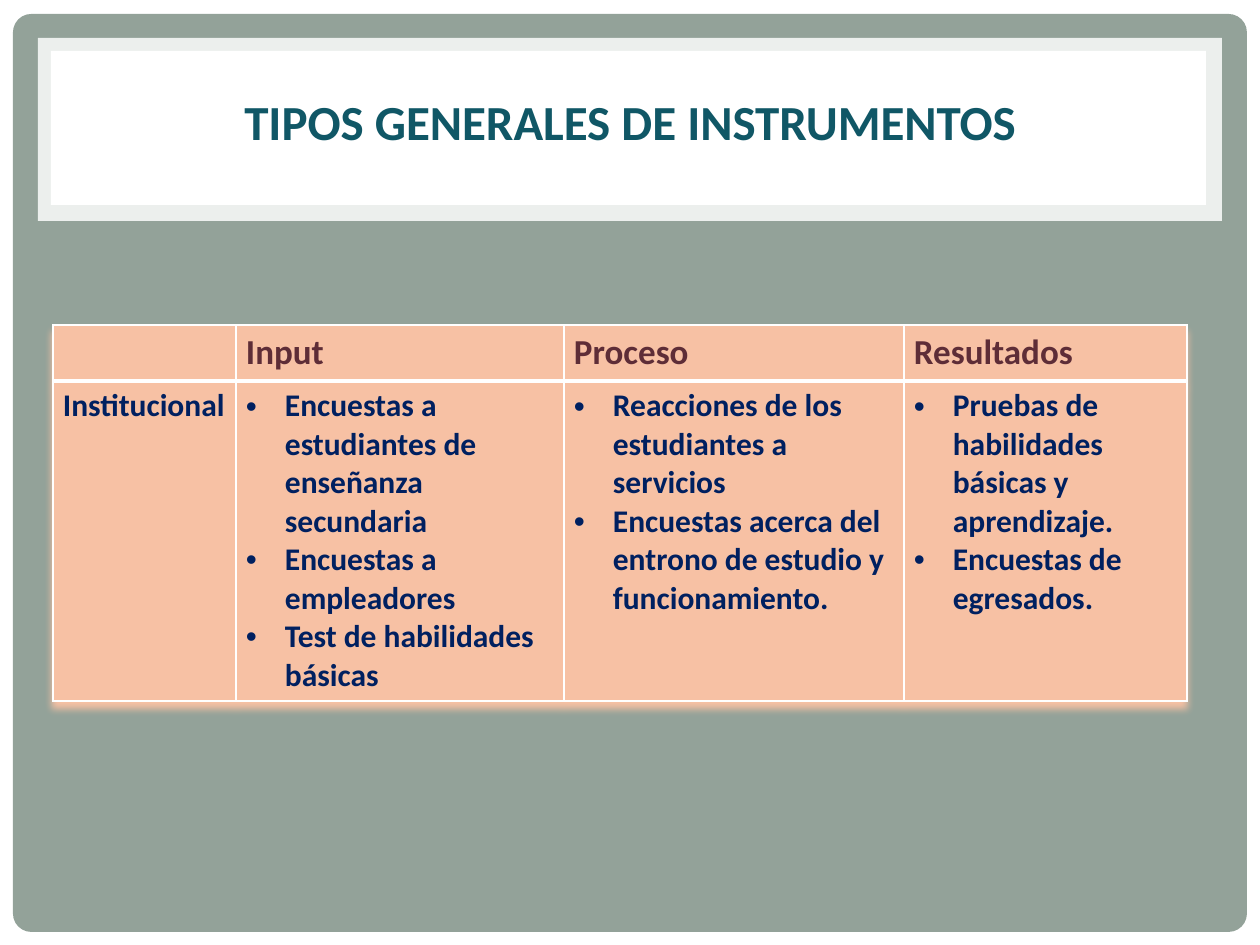
from lxml.etree import SubElement as Sub
from pptx import Presentation
from pptx.dml.color import RGBColor
from pptx.enum.shapes import MSO_SHAPE as Kind
from pptx.enum.text import MSO_ANCHOR as Anchor, PP_ALIGN as Align
from pptx.oxml import parse_xml
from pptx.oxml.ns import nsdecls, qn
from pptx.util import Pt

SCALE = 914400 / 126
WHITE, SAGE, PEACH = "FFFFFF", "93A299", "F7C1A4"
HEAD = {"size": Pt(20), "color": "5E2D37"}
BODY = {"size": Pt(18), "color": "002060"}
TITLE = {"size": Pt(28), "color": "105766"}
COLS = (183, 328, 340, 283)
ROWS = (56, 320)
CELLS = (
    ([], ["Input"], ["Proceso"], ["Resultados"]),
    (
        ["Institucional"],
        ["Encuestas a estudiantes de enseñanza secundaria",
         "Encuestas a empleadores",
         "Test de habilidades básicas"],
        ["Reacciones de los estudiantes a servicios",
         "Encuestas acerca del entrono de estudio y funcionamiento."],
        ["Pruebas de habilidades básicas y aprendizaje.",
         "Encuestas de egresados."],
    ),
)


def px(n):
    return round(n * SCALE)


def rgb(code):
    return RGBColor.from_string(code)


def paint(fill, code):
    fill.solid()
    fill.fore_color.rgb = rgb(code)


def style(font, look):
    font.color.rgb = rgb(look["color"])
    for key, val in {"name": "Calibri", "bold": True, "size": look["size"]}.items():
        setattr(font, key, val)


def panel(slide, box, code, kind=Kind.RECTANGLE):
    shape = slide.shapes.add_shape(kind, *map(px, box))
    shape.shadow.inherit = False
    shape.line.fill.background()
    paint(shape.fill, code)
    return shape


def add_frame(slide, box):
    frame = panel(slide, box, SAGE, Kind.ROUNDED_RECTANGLE)
    frame.adjustments[0] = 0.02


def add_title(slide, box, text):
    x, y, w, h = box
    glow = panel(slide, box, WHITE)
    tint = glow.fill._xPr.find(qn("a:solidFill"))[0]
    Sub(tint, qn("a:alpha"), val="83000")
    panel(slide, (x + 13, y + 13, w - 29, h - 29), WHITE)
    title = slide.shapes.title
    spots = (x + 49, y + 12, w - 98, h - 42)
    for key, val in zip(("left", "top", "width", "height"), spots):
        setattr(title, key, px(val))
    title.element.getparent().append(title.element)
    frame = title.text_frame
    frame.word_wrap = True
    frame.vertical_anchor = Anchor.MIDDLE
    frame.text = text
    para = frame.paragraphs[0]
    para.alignment = Align.CENTER
    style(para.runs[0].font, TITLE)


def add_bullet(para):
    props = para._p.get_or_add_pPr()
    props.set("marL", str(px(39)))
    props.set("indent", str(-px(39)))
    Sub(props, qn("a:buFont"), typeface="Arial")
    Sub(props, qn("a:buChar"), char="•")


def edge(cell, widths):
    """Draw white borders in points, keyed by side."""
    props = cell._tc.get_or_add_tcPr()
    for spot, (side, width) in enumerate(widths.items()):
        props.insert(spot, parse_xml(
            f'<a:ln{side} {nsdecls("a")} w="{Pt(width)}"><a:solidFill>'
            f'<a:srgbClr val="{WHITE}"/></a:solidFill></a:ln{side}>'))


def fill_cell(cell, lines, head, listed):
    paint(cell.fill, PEACH)
    edge(cell, {"L": 1, "R": 1, "T": 1 if head else 3, "B": 3 if head else 1})
    sides = {"left": 10, "right": 10, "top": 6, "bottom": 6}
    for side, gap in sides.items():
        setattr(cell, f"margin_{side}", px(gap))
    frame = cell.text_frame
    for i, line in enumerate(lines):
        para = frame.add_paragraph() if i else frame.paragraphs[0]
        if listed:
            add_bullet(para)
        run = para.add_run()
        run.text = line
        style(run.font, HEAD if head else BODY)


def add_grid(slide, x, y):
    box = (x, y, sum(COLS), sum(ROWS))
    table = slide.shapes.add_table(len(ROWS), len(COLS), *map(px, box)).table
    table.first_row = table.horz_banding = False
    table._tbl.tblPr.insert(0, parse_xml(
        f'<a:effectLst {nsdecls("a")}><a:outerShdw blurRad="50800" dist="50800" '
        f'dir="5400000"><a:srgbClr val="{PEACH}"/></a:outerShdw></a:effectLst>'))
    for col, width in zip(table.columns, COLS):
        col.width = px(width)
    for r, (row, high) in enumerate(zip(table.rows, ROWS)):
        row.height = px(high)
        for c, lines in enumerate(CELLS[r]):
            fill_cell(table.cell(r, c), lines, r == 0, r > 0 and c > 0)


def main():
    deck = Presentation()
    deck.slide_width, deck.slide_height = px(1260), px(945)
    slide = deck.slides.add_slide(deck.slide_layouts[5])
    paint(slide.background.fill, WHITE)
    add_frame(slide, (13, 14, 1234, 918))
    add_title(slide, (38, 38, 1184, 183), "TIPOS GENERALES DE INSTRUMENTOS")
    add_grid(slide, 53, 325)
    deck.save("out.pptx")


if __name__ == "__main__":
    main()
